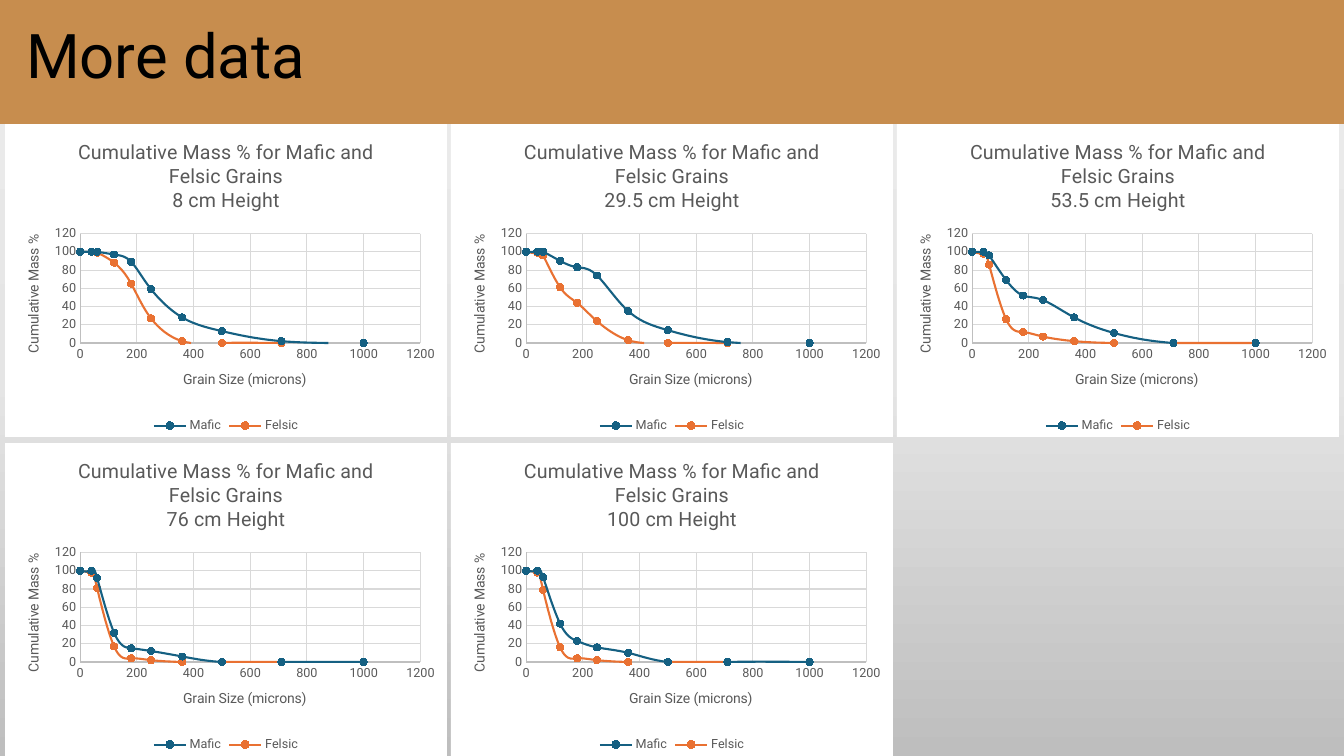
from copy import deepcopy

from lxml import etree
from pptx import Presentation, util as u
from pptx.chart.data import XyChartData
from pptx.dml.color import RGBColor
from pptx.enum import chart as c, shapes, text
from pptx.oxml import parse_xml
from pptx.oxml.ns import nsdecls, qn

PX = 914400 / 100.8
FONT = "Roboto"
BLACK = RGBColor(0x00, 0x00, 0x00)
BANNER = RGBColor(0xC7, 0x8D, 0x4E)
GREY_TEXT = RGBColor(0x59, 0x59, 0x59)
AXIS = RGBColor(0xBF, 0xBF, 0xBF)
GRID = RGBColor(0xD9, 0xD9, 0xD9)
SERIES_COLORS = [RGBColor(0x15, 0x60, 0x82), RGBColor(0xE9, 0x71, 0x32)]
BACKGROUND_STOPS = [
    (0, RGBColor(0xEC, 0xEC, 0xEC)),
    (0.5, RGBColor(0xE5, 0xE5, 0xE5)),
    (1, RGBColor(0xBE, 0xBE, 0xBE)),
]

GRAIN_SIZES = [1000, 710, 500, 360, 250, 180, 120, 60, 40, 0]
SAMPLES = [
    ("8 cm", [0, 2, 13, 28, 59, 89, 97, 100, 100, 100],
     [0, 0, 0, 2, 27, 65, 88, 99, 100, 100]),
    ("29.5 cm", [0, 1, 14, 35, 74, 83, 90, 100, 100, 100],
     [0, 0, 0, 3, 24, 44, 61, 96, 99, 100]),
    ("53.5 cm", [0, 0, 11, 28, 47, 52, 69, 96, 100, 100],
     [0, 0, 0, 2, 7, 12, 26, 86, 98, 100]),
    ("76 cm", [0, 0, 0, 6, 12, 15, 32, 92, 100, 100],
     [0, 0, 0, 0, 2, 4, 17, 81, 98, 100]),
    ("100 cm", [0, 0, 0, 10, 16, 23, 42, 93, 100, 100],
     [0, 0, 0, 0, 2, 4, 16, 79, 98, 100]),
]
CHART_WIDTH, CHART_HEIGHT = 442, 313
PLOT_BOX = {"x": 0.17, "y": 0.35, "w": 0.77, "h": 0.35}


def px(*lengths):
    """Turn pixel lengths into EMU."""
    return [u.Emu(round(length * PX)) for length in lengths]


def style_font(font, size, color):
    font.name = FONT
    font.size = u.Pt(size)
    font.bold = False
    font.color.rgb = color


presentation = Presentation()
presentation.slide_width, presentation.slide_height = px(1344, 756)
slide = presentation.slides.add_slide(presentation.slide_layouts[5])

# Background gradient, light at the top
fill = slide.background.fill
fill.gradient()
fill.gradient_angle = 270
first_stop = fill.gradient_stops[0]._element
first_stop.addnext(deepcopy(first_stop))
for stop, (position, color) in zip(fill.gradient_stops, BACKGROUND_STOPS):
    stop.position = position
    stop.color.rgb = color

# Banner, placed behind the title
banner = slide.shapes.add_shape(shapes.MSO_SHAPE.RECTANGLE, *px(-9, -6, 1368, 130))
banner.shadow.inherit = False
banner.fill.solid()
banner.fill.fore_color.rgb = BANNER
banner.line.fill.background()

title = slide.shapes.title
title._element.addprevious(banner._element)
title.left, title.top, title.width, title.height = px(16, -6, 1159, 130)
title.text_frame.text = "More data"
title.text_frame.vertical_anchor = text.MSO_ANCHOR.MIDDLE
paragraph = title.text_frame.paragraphs[0]
paragraph.alignment = text.PP_ALIGN.LEFT
paragraph.line_spacing = 0.9
style_font(paragraph.runs[0].font, 44, BLACK)

# One chart per sampling height, three to a row
for index, (height, mafic, felsic) in enumerate(SAMPLES):
    row, column = divmod(index, 3)
    data = XyChartData()
    for name, masses in (("Mafic", mafic), ("Felsic", felsic)):
        points = data.add_series(name)
        for grain_size, mass in zip(GRAIN_SIZES, masses):
            points.add_data_point(grain_size, mass)
    chart = slide.shapes.add_chart(
        c.XL_CHART_TYPE.XY_SCATTER_SMOOTH,
        *px(5 + 446 * column, 124 + 319 * row, CHART_WIDTH, CHART_HEIGHT), data).chart
    style_font(chart.font, 10, BLACK)
    chart.plots[0].vary_by_categories = False

    chart.has_title = True
    chart.chart_title.include_in_layout = False
    heading = chart.chart_title.text_frame
    heading.text = f"Cumulative Mass % for Mafic and Felsic Grains\n{height} Height"
    for paragraph in heading.paragraphs:
        style_font(paragraph.runs[0].font, 14, GREY_TEXT)

    chart.has_legend = True
    chart.legend.position = c.XL_LEGEND_POSITION.BOTTOM
    chart.legend.include_in_layout = False
    style_font(chart.legend.font, 9, GREY_TEXT)

    for axis, label, maximum, unit in (
            (chart.category_axis, "Grain Size (microns)", 1200, 200),
            (chart.value_axis, "Cumulative Mass %", 120, 20)):
        axis.minimum_scale, axis.maximum_scale = 0, maximum
        axis.major_unit = unit
        axis.major_tick_mark = axis.minor_tick_mark = c.XL_TICK_MARK.NONE
        axis.has_major_gridlines = True
        for line, color in ((axis.format.line, AXIS),
                            (axis.major_gridlines.format.line, GRID)):
            line.color.rgb = color
            line.width = u.Pt(0.75)
        style_font(axis.tick_labels.font, 9, GREY_TEXT)
        axis.has_title = True
        axis.axis_title.text_frame.text = label
        style_font(axis.axis_title.text_frame.paragraphs[0].runs[0].font, 10, GREY_TEXT)

    for series, color in zip(chart.plots[0].series, SERIES_COLORS):
        series._element.get_or_add_smooth().set("val", "1")
        series.format.line.color.rgb = color
        series.format.line.width = u.Pt(1.5)
        marker = series.marker
        marker.style = c.XL_MARKER_STYLE.CIRCLE
        marker.size = 5
        marker.format.fill.solid()
        marker.format.fill.fore_color.rgb = color
        marker.format.line.color.rgb = color

    # White chart area and a fixed plot box
    chart_element = chart._chartSpace.find(qn("c:chart"))
    chart_element.addnext(parse_xml(
        f'<c:spPr {nsdecls("c", "a")}><a:solidFill><a:srgbClr val="FFFFFF"/></a:solidFill>'
        '<a:ln><a:noFill/></a:ln></c:spPr>'))
    plot_area = chart_element.find(qn("c:plotArea"))
    for layout in plot_area.findall(qn("c:layout")):
        plot_area.remove(layout)
    layout = parse_xml(f'<c:layout {nsdecls("c")}><c:manualLayout/></c:layout>')
    settings = {"layoutTarget": "inner", "xMode": "edge", "yMode": "edge", **PLOT_BOX}
    for tag, value in settings.items():
        etree.SubElement(layout[0], qn(f"c:{tag}")).set("val", str(value))
    plot_area.insert(0, layout)

presentation.save("out.pptx")
